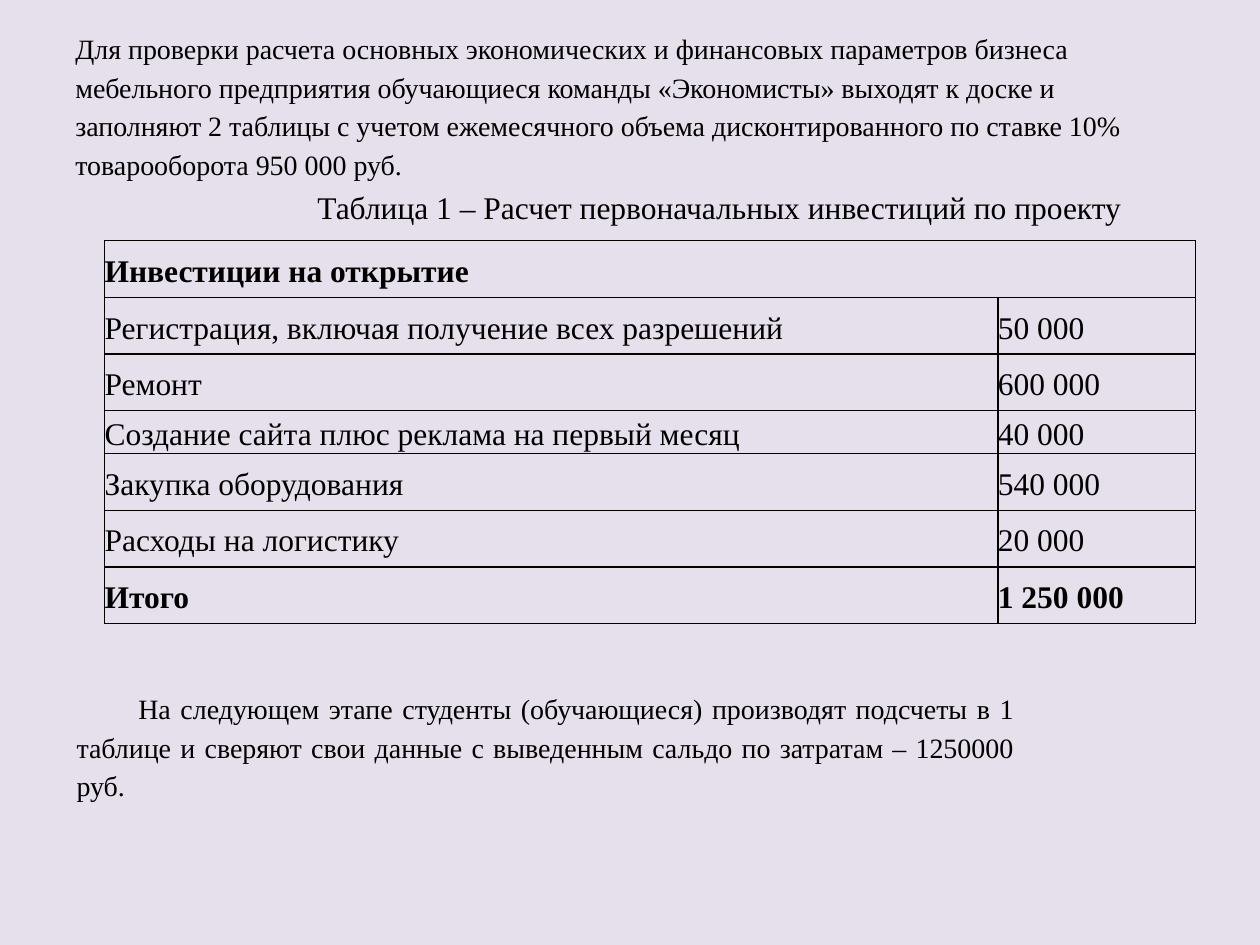
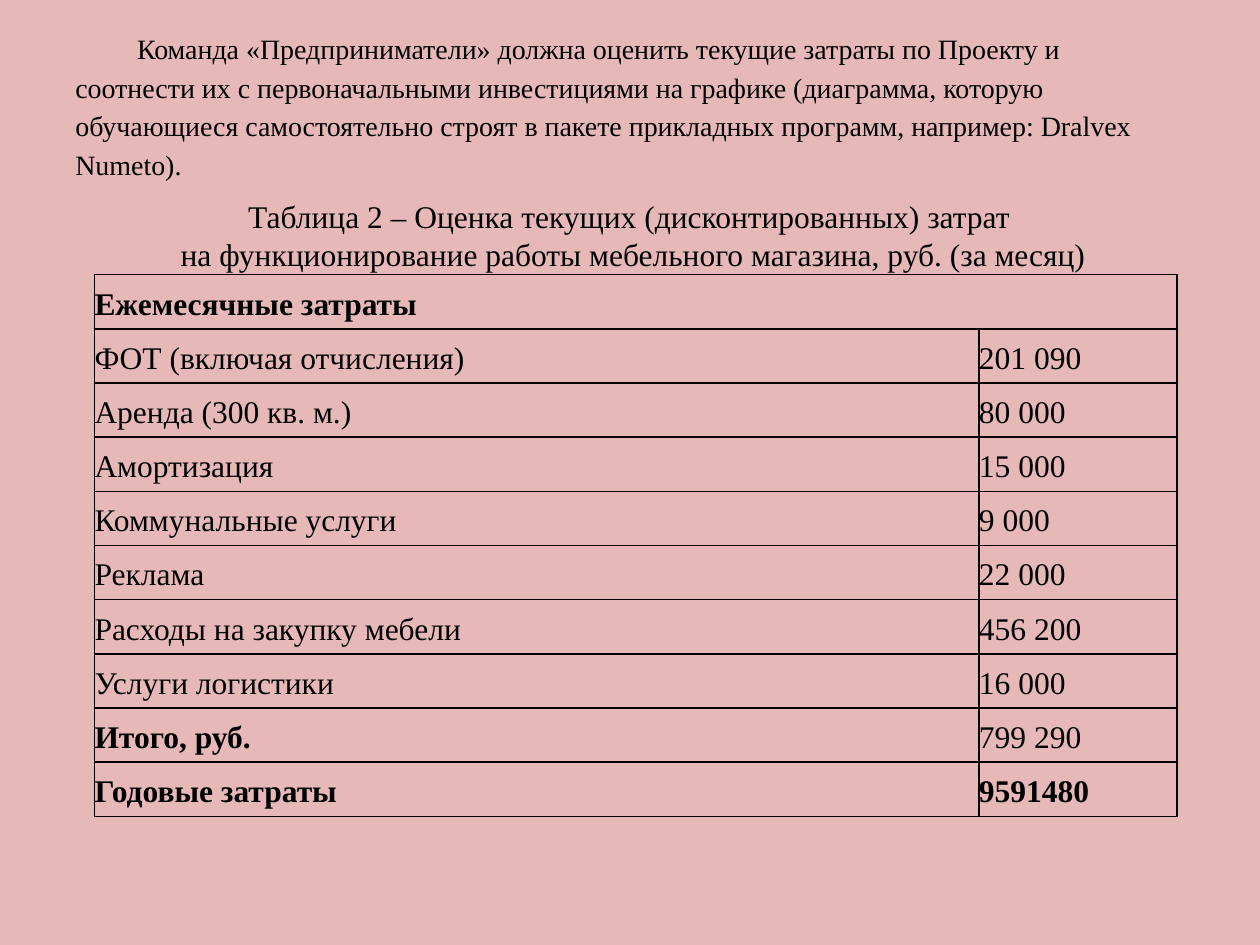
"""Builds two slides with cost tables for a furniture business lesson."""
from dataclasses import dataclass

from lxml.etree import SubElement
from pptx import Presentation
from pptx.dml.color import RGBColor
from pptx.enum.text import MSO_ANCHOR, MSO_AUTO_SIZE, PP_ALIGN
from pptx.oxml.ns import qn
from pptx.slide import Slide
from pptx.table import _Cell
from pptx.util import Inches, Pt

COLORS = {"text": "000000", "border": "000000", "investments": "E6E0EC", "expenses": "E6B9B8"}
FONT = "Times New Roman"
FIRST_LINE_INDENT = Inches(0.49)
BODY_FORMAT = {"line_spacing": 1.15}
CELL_FORMAT = {"alignment": PP_ALIGN.JUSTIFY, "line_spacing": 1.15, "space_after": Pt(10)}
CELL_FRAME = {
    "margin_left": 0,
    "margin_right": 0,
    "margin_top": 0,
    "margin_bottom": 0,
    "vertical_anchor": MSO_ANCHOR.MIDDLE,
}
INTRO_FRAME = {
    "word_wrap": True,
    "vertical_anchor": MSO_ANCHOR.MIDDLE,
    "margin_bottom": Inches(0.25),
}
CAPTION_FRAME = {
    "word_wrap": False,
    "vertical_anchor": MSO_ANCHOR.MIDDLE,
    "auto_size": MSO_AUTO_SIZE.SHAPE_TO_FIT_TEXT,
}
NOTE_FRAME = {"word_wrap": True, "auto_size": MSO_AUTO_SIZE.SHAPE_TO_FIT_TEXT}


@dataclass
class TextBlock:
    lines: list[str]
    box: tuple[float, float, float, float]
    size: int
    frame_format: dict
    paragraph_format: dict
    indented: bool = False


@dataclass
class CostTable:
    heading: str
    rows: list[tuple[str, str]]
    left: float
    top: float
    column_widths: tuple[float, float]
    row_heights: list[float]
    bold_texts: set[str]


@dataclass
class CostSlide:
    background: str
    blocks: list[TextBlock]
    table: CostTable


def intro(text: str, indented: bool = False) -> TextBlock:
    """Describes the opening paragraph at its shared place."""
    return TextBlock([text], (0.5, 0.3, 9, 1.25), 16, INTRO_FRAME, BODY_FORMAT, indented)


def caption(
    lines: list[str], box: tuple[float, float, float, float], alignment: PP_ALIGN
) -> TextBlock:
    """Describes a table caption."""
    return TextBlock(lines, box, 18, CAPTION_FRAME, {"alignment": alignment})


SLIDES = [
    CostSlide(
        background="investments",
        blocks=[
            intro(
                "Для проверки расчета основных экономических и финансовых параметров бизнеса "
                "мебельного предприятия обучающиеся команды «Экономисты» выходят к доске и "
                "заполняют 2 таблицы с учетом ежемесячного объема дисконтированного по ставке "
                "10% товарооборота 950 000 руб."
            ),
            caption(
                ["Таблица 1 – Расчет первоначальных инвестиций по проекту"],
                (2.42, 1.44, 6.65, 0.4),
                PP_ALIGN.JUSTIFY,
            ),
            TextBlock(
                [
                    "На следующем этапе студенты (обучающиеся) производят подсчеты в 1 таблице "
                    "и сверяют свои данные с выведенным сальдо по затратам – 1250000 руб."
                ],
                (0.51, 5.4, 7.64, 1.01),
                16,
                NOTE_FRAME,
                BODY_FORMAT | {"alignment": PP_ALIGN.JUSTIFY},
                indented=True,
            ),
        ],
        table=CostTable(
            heading="Инвестиции на открытие",
            rows=[
                ("Регистрация, включая получение всех разрешений", "50 000"),
                ("Ремонт", "600 000"),
                ("Создание сайта плюс реклама на первый месяц", "40 000"),
                ("Закупка оборудования", "540 000"),
                ("Расходы на логистику", "20 000"),
                ("Итого", "1 250 000"),
            ],
            left=0.83,
            top=1.91,
            column_widths=(7.09, 1.57),
            row_heights=[0.45] * 3 + [0.34] + [0.45] * 3,
            bold_texts={"Итого", "1 250 000"},
        ),
    ),
    CostSlide(
        background="expenses",
        blocks=[
            intro(
                "Команда «Предприниматели» должна оценить текущие затраты по Проекту и "
                "соотнести их с первоначальными инвестициями на графике (диаграмма, которую "
                "обучающиеся самостоятельно строят в пакете прикладных программ, например: "
                "Dralvex Numeto).",
                indented=True,
            ),
            caption(
                [
                    "Таблица 2 – Оценка текущих (дисконтированных) затрат ",
                    "на функционирование работы мебельного магазина, руб. (за месяц)",
                ],
                (1.3, 1.51, 7.45, 0.71),
                PP_ALIGN.CENTER,
            ),
        ],
        table=CostTable(
            heading="Ежемесячные затраты",
            rows=[
                ("ФОТ (включая отчисления)", "201 090"),
                ("Аренда (300 кв. м.)", "80 000"),
                ("Амортизация", "15 000"),
                ("Коммунальные услуги", "9 000"),
                ("Реклама", "22 000"),
                ("Расходы на закупку мебели", "456 200"),
                ("Услуги логистики", "16 000"),
                ("Итого, руб.", "799 290"),
                ("Годовые затраты", "9591480"),
            ],
            left=0.75,
            top=2.18,
            column_widths=(7.02, 1.57),
            row_heights=[0.43] * 10,
            bold_texts={"Итого, руб.", "Годовые затраты", "9591480"},
        ),
    ),
]


def apply_format(target: object, values: dict) -> None:
    """Sets each attribute in values on the target."""
    for name, value in values.items():
        setattr(target, name, value)


def write_run(paragraph: object, text: str, size: int, bold: bool = False) -> None:
    """Adds one run in the shared font."""
    run = paragraph.add_run()
    run.text = text
    apply_format(run.font, {"name": FONT, "size": Pt(size), "bold": bold})
    run.font.color.rgb = RGBColor.from_string(COLORS["text"])


def draw_text(slide: Slide, block: TextBlock) -> None:
    """Draws a text block with one paragraph per line."""
    shape = slide.shapes.add_textbox(*map(Inches, block.box))
    frame = shape.text_frame
    apply_format(frame, block.frame_format)
    for index, line in enumerate(block.lines):
        paragraph = frame.add_paragraph() if index else frame.paragraphs[0]
        apply_format(paragraph, block.paragraph_format)
        if block.indented:
            paragraph_properties = paragraph._p.get_or_add_pPr()
            paragraph_properties.set("marL", "0")
            paragraph_properties.set("indent", str(FIRST_LINE_INDENT))
        write_run(paragraph, line, block.size)


def draw_borders(cell: _Cell) -> None:
    """Outlines a cell on all four sides and clears its fill."""
    cell_properties = cell._tc.get_or_add_tcPr()
    for side in ("a:lnL", "a:lnR", "a:lnT", "a:lnB"):
        line = SubElement(cell_properties, qn(side), w=str(Pt(1)))
        fill = SubElement(line, qn("a:solidFill"))
        SubElement(fill, qn("a:srgbClr"), val=COLORS["border"])
    cell.fill.background()


def draw_table(slide: Slide, costs: CostTable) -> None:
    """Draws a cost table under a heading that spans both columns."""
    size = sum(costs.column_widths), sum(costs.row_heights)
    shape = slide.shapes.add_table(
        len(costs.row_heights), 2, *map(Inches, (costs.left, costs.top, *size))
    )
    table = shape.table
    apply_format(table, {"first_row": False, "horz_banding": False})
    for column, width in zip(table.columns, costs.column_widths):
        column.width = Inches(width)
    for row, height in zip(table.rows, costs.row_heights):
        row.height = Inches(height)
    table.cell(0, 0).merge(table.cell(0, 1))
    bold_texts = costs.bold_texts | {costs.heading}
    for row, texts in zip(table.rows, [(costs.heading, ""), *costs.rows]):
        for cell, text in zip(row.cells, texts):
            apply_format(cell, CELL_FRAME)
            draw_borders(cell)
            if text:
                paragraph = cell.text_frame.paragraphs[0]
                apply_format(paragraph, CELL_FORMAT)
                write_run(paragraph, text, 18, text in bold_texts)


def main() -> None:
    """Builds and saves the presentation."""
    presentation = Presentation()
    apply_format(presentation, {"slide_width": Inches(10), "slide_height": Inches(7.5)})
    for cost_slide in SLIDES:
        slide = presentation.slides.add_slide(presentation.slide_layouts[6])
        background = slide.background.fill
        background.solid()
        background.fore_color.rgb = RGBColor.from_string(COLORS[cost_slide.background])
        draw_table(slide, cost_slide.table)
        for block in cost_slide.blocks:
            draw_text(slide, block)
    presentation.save("out.pptx")


if __name__ == "__main__":
    main()
